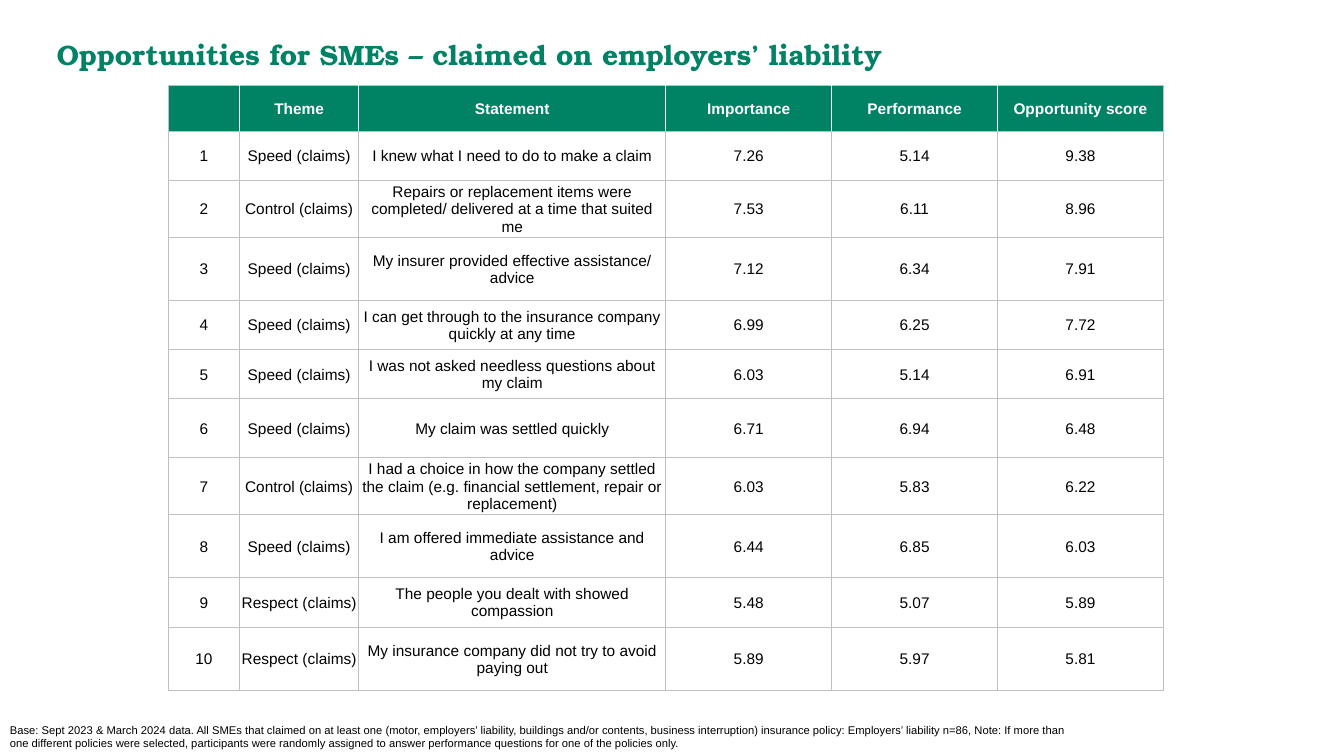
from dataclasses import dataclass

from lxml import etree
from pptx import Presentation
from pptx.dml.color import RGBColor
from pptx.enum import text
from pptx.oxml import ns
from pptx.util import Cm, Pt


@dataclass(frozen=True)
class Theme:
    green: str = "008265"
    white: str = "FFFFFF"
    black: str = "000000"
    grid: str = "BFBFBF"
    heading_font: str = "TeX Gyre Bonum"
    body_font: str = "Arial"
    title_size: float = 20
    table_size: float = 11
    note_size: float = 8


@dataclass(frozen=True)
class Opportunity:
    theme: str
    statement: str
    importance: float
    performance: float
    score: float
    height: float  # cm


THEME = Theme()

# Content
TITLE = "Opportunities for SMEs – claimed on employers’ liability"
HEADERS = ("", "Theme", "Statement", "Importance", "Performance", "Opportunity score")
COLUMN_WIDTHS = (1.8, 3, 7.74, 4.18, 4.18, 4.18)
HEADER_HEIGHT = 1.16
OPPORTUNITIES = (
    Opportunity("Speed (claims)", "I knew what I need to do to make a claim",
                7.26, 5.14, 9.38, 1.24),
    Opportunity("Control (claims)",
                "Repairs or replacement items were completed/ delivered at a time that suited me",
                7.53, 6.11, 8.96, 1.41),
    Opportunity("Speed (claims)", "My insurer provided effective assistance/ advice",
                7.12, 6.34, 7.91, 1.59),
    Opportunity("Speed (claims)",
                "I can get through to the insurance company quickly at any time",
                6.99, 6.25, 7.72, 1.24),
    Opportunity("Speed (claims)", "I was not asked needless questions about my claim",
                6.03, 5.14, 6.91, 1.24),
    Opportunity("Speed (claims)", "My claim was settled quickly",
                6.71, 6.94, 6.48, 1.48),
    Opportunity("Control (claims)",
                "I had a choice in how the company settled the claim "
                "(e.g. financial settlement, repair or replacement)",
                6.03, 5.83, 6.22, 1.44),
    Opportunity("Speed (claims)", "I am offered immediate assistance and advice",
                6.44, 6.85, 6.03, 1.59),
    Opportunity("Respect (claims)", "The people you dealt with showed compassion",
                5.48, 5.07, 5.89, 1.24),
    Opportunity("Respect (claims)", "My insurance company did not try to avoid paying out",
                5.89, 5.97, 5.81, 1.6),
)
BASE_NOTE = (
    "Base: Sept 2023 & March 2024 data. All SMEs that claimed on at least one (motor, "
    "employers’ liability, buildings and/or contents, business interruption) insurance policy: "
    "Employers’ liability n=86, Note: If more than one different policies were selected, "
    "participants were randomly assigned to answer performance questions for one of the "
    "policies only."
)


def style_paragraph(p, size: float, color: str, bold: bool = False,
                    font: str = THEME.body_font, align=text.PP_ALIGN.LEFT) -> None:
    p.alignment = align
    p.font.name = font
    p.font.size = Pt(size)
    p.font.bold = bold
    p.font.color.rgb = RGBColor.from_string(color)


def add_border(cell, side: str, color: str, width: float) -> None:
    ln = etree.SubElement(cell._tc.get_or_add_tcPr(), ns.qn(f"a:ln{side}"), w=str(Pt(width)))
    fill = etree.SubElement(ln, ns.qn("a:solidFill"))
    etree.SubElement(fill, ns.qn("a:srgbClr"), val=color)


def fill_cell(cell, value: str, column: int, is_header: bool) -> None:
    cell.text = value
    cell.vertical_anchor = text.MSO_ANCHOR.MIDDLE
    cell.margin_left = cell.margin_right = cell.margin_top = Cm(0.03)
    cell.margin_bottom = 0
    style_paragraph(cell.text_frame.paragraphs[0], THEME.table_size,
                    THEME.white if is_header else THEME.black, is_header,
                    align=text.PP_ALIGN.CENTER)

    # White dividers between header cells, grey grid elsewhere
    inner = {"L": column > 0, "R": column < len(HEADERS) - 1}
    for side in "LRTB":
        if is_header and inner.get(side, False):
            add_border(cell, side, THEME.white, 1)
        else:
            add_border(cell, side, THEME.grid, 0.75)

    if is_header:
        cell.fill.solid()
        cell.fill.fore_color.rgb = RGBColor.from_string(THEME.green)
    else:
        cell.fill.background()


def add_title(slide) -> None:
    sp = slide.shapes.title
    sp.left, sp.top, sp.width, sp.height = Cm(1.17), Cm(0.81), Cm(31.2), Cm(1.12)
    tf = sp.text_frame
    tf.text = TITLE
    tf.vertical_anchor = text.MSO_ANCHOR.MIDDLE
    tf.auto_size = text.MSO_AUTO_SIZE.SHAPE_TO_FIT_TEXT
    style_paragraph(tf.paragraphs[0], THEME.title_size, THEME.green, True, THEME.heading_font)


def add_opportunity_table(slide) -> None:
    rows = [HEADERS]
    for rank, o in enumerate(OPPORTUNITIES, 1):
        scores = (f"{v:.2f}" for v in (o.importance, o.performance, o.score))
        rows.append((str(rank), o.theme, o.statement, *scores))
    heights = [HEADER_HEIGHT, *(o.height for o in OPPORTUNITIES)]

    table = slide.shapes.add_table(len(rows), len(HEADERS), Cm(4.24), Cm(2.15),
                                   Cm(sum(COLUMN_WIDTHS)), Cm(sum(heights))).table
    table.horz_banding = False
    for column, width in zip(table.columns, COLUMN_WIDTHS):
        column.width = Cm(width)
    for r, (values, height) in enumerate(zip(rows, heights)):
        table.rows[r].height = Cm(height)
        for c, value in enumerate(values):
            fill_cell(table.cell(r, c), value, c, r == 0)


def add_base_note(slide) -> None:
    sp = slide.shapes.add_textbox(0, Cm(18.09), Cm(27.23), Cm(0.96))
    tf = sp.text_frame
    tf.word_wrap = True
    tf.text = BASE_NOTE
    style_paragraph(tf.paragraphs[0], THEME.note_size, THEME.black)


def main() -> None:
    prs = Presentation()
    prs.slide_width, prs.slide_height = Cm(33.87), Cm(19.05)
    slide = prs.slides.add_slide(prs.slide_layouts.get_by_name("Title Only"))
    add_title(slide)
    add_opportunity_table(slide)
    add_base_note(slide)
    prs.save("out.pptx")


if __name__ == "__main__":
    main()
